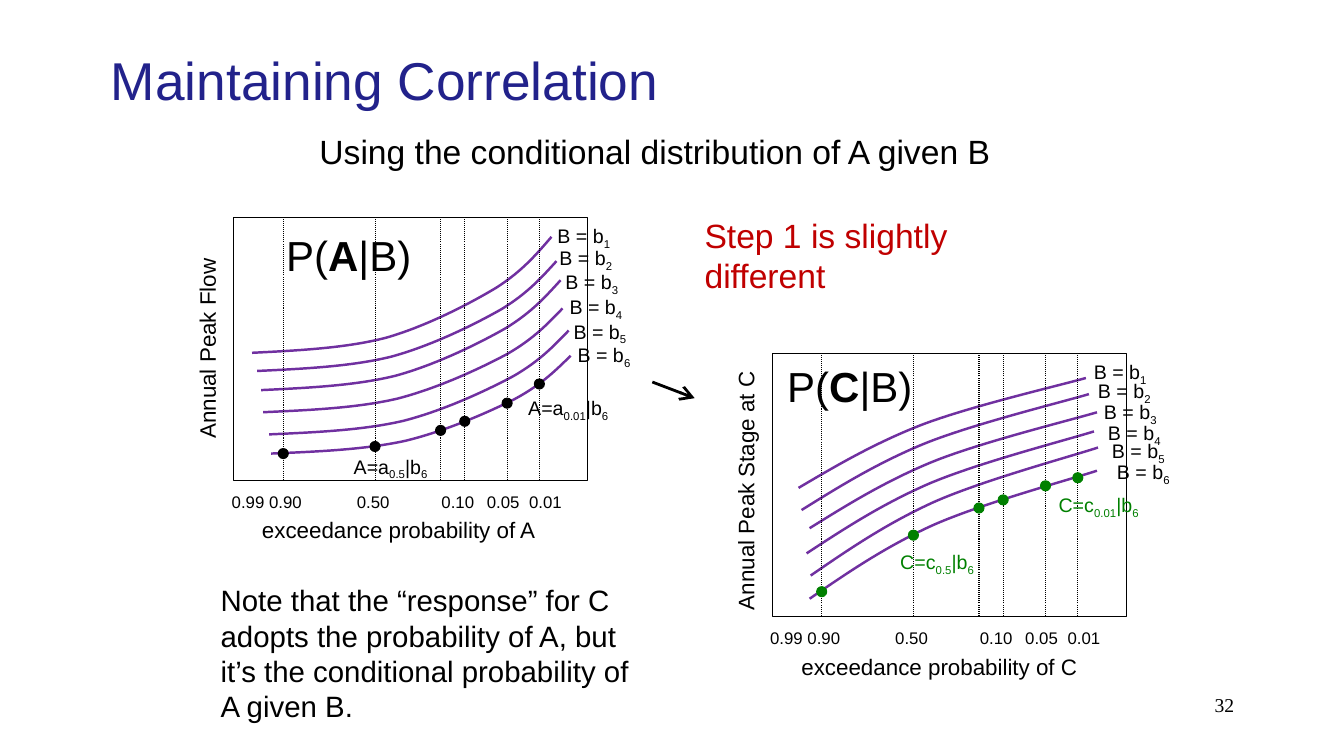
from lxml import etree
from pptx import Presentation
from pptx import util as u
from pptx.dml.color import RGBColor
from pptx.enum import dml, shapes, text
from pptx.oxml import ns

PX = 9144  # EMU per px, 100 px to the inch
COLORS = {"title": "22228B", "ink": "000000", "curve": "7030A0",
          "response": "008000", "step": "C00000"}

TITLE = ("Maintaining Correlation", (100, 16, 1133, 125))
# text, box, size, colour
NOTES = [
    ("Using the conditional distribution of A given B", (307, 125, 766, 51), 24, "ink"),
    ("Step 1 is slightly different", (689, 208, 286, 91), 24, "step"),
    ("Note that the “response” for C adopts the probability of A, but "
     "it’s the conditional probability of A given B.", (209, 573, 440, 151), 21, "ink"),
]
PAGE = ("32", (956, 683, 278, 50))
ARROW = (647, 379, 689, 395)

TICKS = "0.99 0.90\t0.50\t0.10\t0.05\t0.01"
TICK_TABS = (124, 208, 253, 295)
FRAME_SIZE = (351, 261)
GRID = (49, 140, 205, 229, 271, 303)  # from the frame's left edge

# shape: control points of joined Bezier curves, x in px and y in % of the height
# curves: left, top, height; labels: left, top of "B = b" 1 to 6
PANELS = [
    {
        "name": "A", "frame": (232, 216), "dot_color": "ink",
        "heading": (274, 223), "ticks": (220, 483), "x_title": (250, 507),
        "y_title": ("Annual Peak Flow", (88, 309, 235, 37)),
        "shape": [(0, 100), (46, 98), (93, 96), (133, 87), (173, 77), (215, 58),
                  (242, 44), (269, 29), (283, 14), (297, 0)],
        "curves": [(250, 235, 115), (255, 259, 109), (259, 278, 109),
                   (261, 306, 103), (267, 328, 103), (269, 353, 97)],
        "labels": [(543, 217), (545, 239), (551, 263), (555, 288), (559, 312), (563, 335)],
        "dots": (450, 443, 427, 418, 400, 381),
        "points": [("A=a", "0.01", (514, 388, 118, 33)), ("A=a", "0.5", (341, 446, 116, 33))],
    },
    {
        "name": "C", "frame": (766, 351), "dot_color": "response",
        "heading": (771, 353), "ticks": (754, 618), "x_title": (785, 643),
        "y_title": ("Annual Peak Stage at C", (607, 464, 265, 37)),
        "shape": [(0, 100), (37, 80), (74, 60), (121, 43), (169, 26), (258, 7), (285, 0)],
        "curves": [(792, 375, 109), (795, 391, 115), (803, 409, 115),
                   (800, 428, 121), (804, 444, 127), (803, 467, 127)],
        "labels": [(1075, 352), (1079, 371), (1085, 392), (1089, 413), (1093, 431), (1098, 451)],
        "dots": (587, 531, 504, 496, 482, 474),
        "points": [("C=c", "0.01", (1040, 484, 115, 33)), ("C=c", "0.5", (883, 541, 97, 33))],
    },
]


def rgb(name):
    return RGBColor.from_string(COLORS[name])


def emu(values):
    return [round(v * PX) for v in values]


def style_run(r, size, color, font="Arial"):
    r.font.size, r.font.name = u.Pt(size), font
    r.font.color.rgb = rgb(color)


def add_text(s, parts, box, size, color="ink", font="Arial"):
    """Add a text box; parts is a string or a list of (text, "", "bold" or "sub")."""
    sp = s.shapes.add_textbox(*emu(box))
    sp.text_frame.word_wrap = True
    p = sp.text_frame.paragraphs[0]
    for content, kind in [(parts, "")] if isinstance(parts, str) else parts:
        r = p.add_run()
        r.text = content
        style_run(r, size, color, font)
        if kind == "bold":
            r.font.bold = True
        elif kind == "sub":
            r._r.get_or_add_rPr().set("baseline", "-25000")
    return sp


def add_line(s, ends, width):
    line = s.shapes.add_connector(shapes.MSO_CONNECTOR.STRAIGHT, *emu(ends))
    line.line.width = u.Pt(width)
    line.line.color.rgb = rgb("ink")
    etree.SubElement(line._element.spPr, ns.qn("a:effectLst"))
    return line


def add_box(s, kind, box, fill=None):
    sp = s.shapes.add_shape(kind, *emu(box))
    sp.shadow.inherit = False
    if fill:
        sp.fill.solid()
        sp.fill.fore_color.rgb = rgb(fill)
    else:
        sp.fill.background()
    sp.line.color.rgb = rgb(fill or "ink")
    sp.line.width = u.Pt(0.75)


def add_curve(s, shape, left, top, height):
    """Add an open outline whose control points are joined as cubic Beziers."""
    pts = [emu((left + x, top + y * height / 100)) for x, y in shape]
    builder = s.shapes.build_freeform(*pts[0], scale=1.0)
    builder.add_line_segments(pts[1:], close=False)
    sp = builder.convert_to_shape()
    sp.shadow.inherit = False
    sp.fill.background()
    sp.line.color.rgb = rgb("curve")
    sp.line.width = u.Pt(1.75)

    outline = next(sp._element.iter(ns.qn("a:path")))
    segments = outline.findall(ns.qn("a:lnTo"))
    for i in range(0, len(segments), 3):
        bezier = etree.SubElement(outline, ns.qn("a:cubicBezTo"))
        for segment in segments[i:i + 3]:
            bezier.append(segment[0])
            outline.remove(segment)


def add_panel(s, panel):
    left, top = panel["frame"]
    width, height = FRAME_SIZE
    add_box(s, shapes.MSO_SHAPE.RECTANGLE, (left, top, width, height))
    for curve in panel["curves"]:
        add_curve(s, panel["shape"], *curve)
    for dx, y in zip(GRID, panel["dots"]):
        x = left + dx
        grid_line = add_line(s, (x, top + height - 1, x, top - 1), 0.75)
        grid_line.line.dash_style = dml.MSO_LINE.ROUND_DOT
        add_box(s, shapes.MSO_SHAPE.OVAL, (x - 5, y - 5, 10, 10), panel["dot_color"])

    for n, place in enumerate(panel["labels"], 1):
        add_text(s, [("B = b", ""), (str(n), "sub")], (*place, 91, 33), 14)
    for name, prob, box in panel["points"]:
        add_text(s, [(name, ""), (prob, "sub"), ("|b", ""), ("6", "sub")],
                 box, 14, panel["dot_color"])
    add_text(s, [("P(", ""), (panel["name"], "bold"), ("|B)", "")],
             (*panel["heading"], 156, 60), 30)
    add_text(s, "exceedance probability of " + panel["name"], (*panel["x_title"], 303, 37), 16)
    y_title, box = panel["y_title"]
    add_text(s, y_title, box, 16).rotation = 270

    ticks = add_text(s, TICKS, (*panel["ticks"], 388, 30), 12)
    p_pr = ticks.text_frame.paragraphs[0]._p.get_or_add_pPr()
    tabs = etree.SubElement(p_pr, ns.qn("a:tabLst"))
    for pos in TICK_TABS:
        etree.SubElement(tabs, ns.qn("a:tab"), pos=str(pos * PX), algn="l")


def main():
    prs = Presentation()
    prs.slide_width, prs.slide_height = emu((1333, 750))
    s = prs.slides.add_slide(prs.slide_layouts[5])

    title = s.shapes.title
    title.text_frame.text, box = TITLE
    title.left, title.top, title.width, title.height = emu(box)
    title.text_frame.vertical_anchor = text.MSO_ANCHOR.MIDDLE
    p = title.text_frame.paragraphs[0]
    p.alignment = text.PP_ALIGN.LEFT
    style_run(p.runs[0], 38, "title")

    for panel in PANELS:
        add_panel(s, panel)
    for note in NOTES:
        add_text(s, *note)
    page = add_text(s, *PAGE, 14, font="Times New Roman")
    page.text_frame.paragraphs[0].alignment = text.PP_ALIGN.RIGHT

    arrow = add_line(s, ARROW, 2)
    etree.SubElement(arrow.line._get_or_add_ln(), ns.qn("a:tailEnd"),
                     type="arrow", w="lg", len="lg")
    prs.save("out.pptx")


if __name__ == "__main__":
    main()
